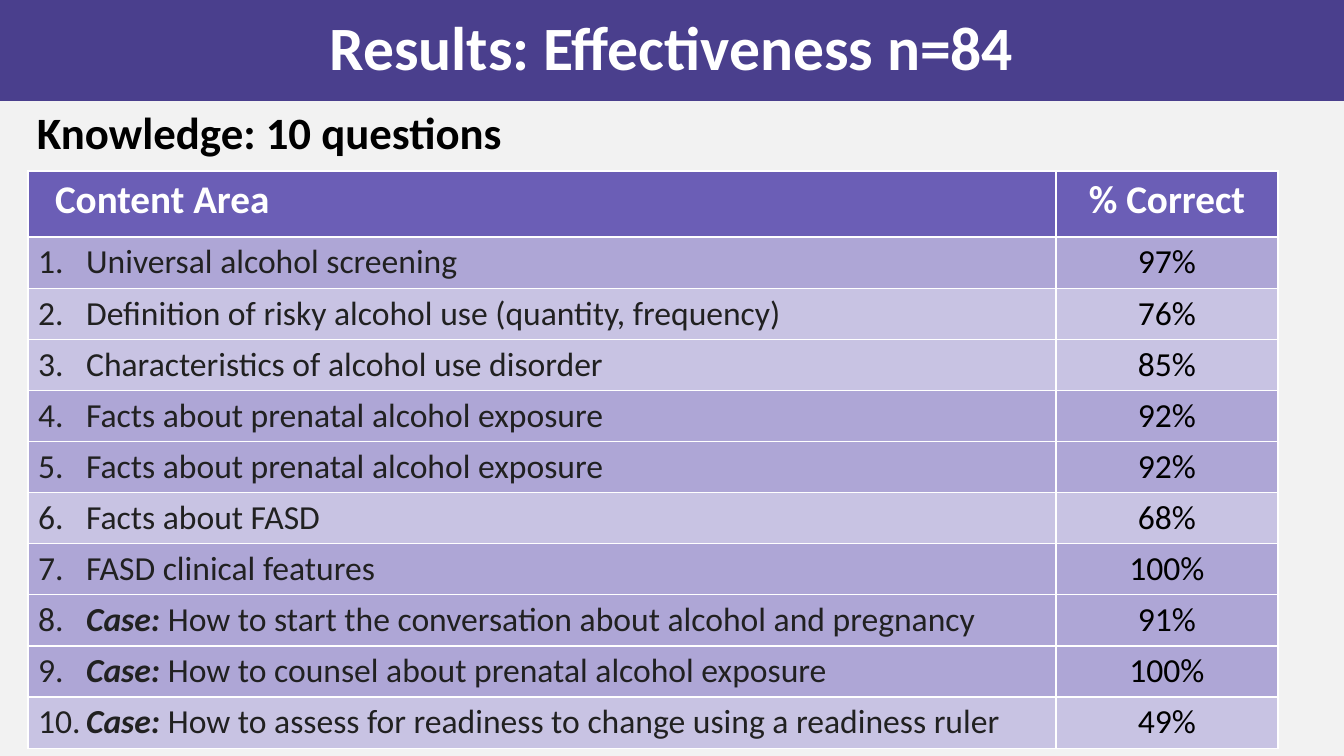
"""Build the slide on knowledge results by content area."""
from pptx import Presentation
from pptx import util as u
from pptx.dml.color import RGBColor
from pptx.enum import text

PX = 914400 / 100.8
FONT = "Calibri"
COLORS = {
    "background": "F2F2F2",
    "title_bar": "4A3F8D",
    "header": "6B5EB6",
    "dark_row": "AEA6D6",
    "light_row": "C8C3E3",
    "white": "FFFFFF",
    "black": "000000",
    "body": "212121",
}
COLUMN_WIDTHS = (1028, 222)
HEADER_HEIGHT = 66
ROW_HEIGHT = 51
NUMBER_INDENT = 48
CASE = "Case: "
RESULTS = [
    ("", "Universal alcohol screening", 97, "dark_row"),
    ("", "Definition of risky alcohol use (quantity, frequency)", 76, "light_row"),
    ("", "Characteristics of alcohol use disorder", 85, "light_row"),
    ("", "Facts about prenatal alcohol exposure", 92, "dark_row"),
    ("", "Facts about prenatal alcohol exposure", 92, "dark_row"),
    ("", "Facts about FASD", 68, "light_row"),
    ("", "FASD clinical features", 100, "dark_row"),
    (CASE, "How to start the conversation about alcohol and pregnancy", 91, "dark_row"),
    (CASE, "How to counsel about prenatal alcohol exposure", 100, "dark_row"),
    (CASE, "How to assess for readiness to change using a readiness ruler", 49, "light_row"),
]


def px(length):
    return u.Emu(round(length * PX))


def paint(fill, color):
    fill.solid()
    fill.fore_color.rgb = RGBColor.from_string(COLORS[color])


def add_run(paragraph, words, size, color, bold=False, italic=False):
    run = paragraph.add_run()
    run.text = words
    run.font.name = FONT
    run.font.size = u.Pt(size)
    run.font.bold = bold
    run.font.italic = italic
    run.font.color.rgb = RGBColor.from_string(COLORS[color])


def place(shape, left, top, width, height):
    shape.left, shape.top = px(left), px(top)
    shape.width, shape.height = px(width), px(height)


def add_title(slide, words):
    title = slide.shapes.title
    place(title, 0, 0, 1344, 101)
    paint(title.fill, "title_bar")
    frame = title.text_frame
    frame.auto_size = text.MSO_AUTO_SIZE.NONE
    frame.vertical_anchor = text.MSO_ANCHOR.MIDDLE
    paragraph = frame.paragraphs[0]
    paragraph.alignment = text.PP_ALIGN.CENTER
    paragraph.line_spacing = 0.9
    add_run(paragraph, words, 44, "white", bold=True)


def add_subtitle(slide, words):
    box = slide.shapes.add_textbox(px(27), px(100), px(610), px(65))
    box.text_frame.word_wrap = True
    add_run(box.text_frame.paragraphs[0], words, 32, "black", bold=True)


def start_cell(cell, color, centered=False):
    paint(cell.fill, color)
    paragraph = cell.text_frame.paragraphs[0]
    if centered:
        paragraph.alignment = text.PP_ALIGN.CENTER
    return paragraph


def add_area(paragraph, number, prefix, area):
    properties = paragraph._p.get_or_add_pPr()
    properties.set("marL", str(px(NUMBER_INDENT)))
    properties.set("indent", str(-px(NUMBER_INDENT)))
    add_run(paragraph, f"{number}.\t", 24, "body")
    if prefix:
        add_run(paragraph, prefix, 24, "body", bold=True, italic=True)
    add_run(paragraph, area, 24, "body")


def add_results_table(slide):
    height = HEADER_HEIGHT + ROW_HEIGHT * len(RESULTS)
    table = slide.shapes.add_table(
        len(RESULTS) + 1, 2, px(28), px(171), px(sum(COLUMN_WIDTHS)), px(height)
    ).table
    table.horz_banding = False
    for column, width in zip(table.columns, COLUMN_WIDTHS):
        column.width = px(width)
    for row in table.rows:
        row.height = px(ROW_HEIGHT)
    table.rows[0].height = px(HEADER_HEIGHT)

    table.cell(0, 0).margin_left = px(27)
    for index, heading in enumerate(("Content Area", "% Correct")):
        paragraph = start_cell(table.cell(0, index), "header", centered=index == 1)
        add_run(paragraph, heading, 28, "white", bold=True)
    for number, (prefix, area, correct, color) in enumerate(RESULTS, start=1):
        add_area(start_cell(table.cell(number, 0), color), number, prefix, area)
        paragraph = start_cell(table.cell(number, 1), color, centered=True)
        add_run(paragraph, f"{correct}%", 24, "black")


def main():
    presentation = Presentation()
    presentation.slide_width, presentation.slide_height = px(1344), px(756)
    slide = presentation.slides.add_slide(presentation.slide_layouts[5])
    paint(slide.background.fill, "background")
    add_title(slide, "Results: Effectiveness n=84")
    add_results_table(slide)
    add_subtitle(slide, "Knowledge: 10 questions")
    presentation.save("out.pptx")


if __name__ == "__main__":
    main()
